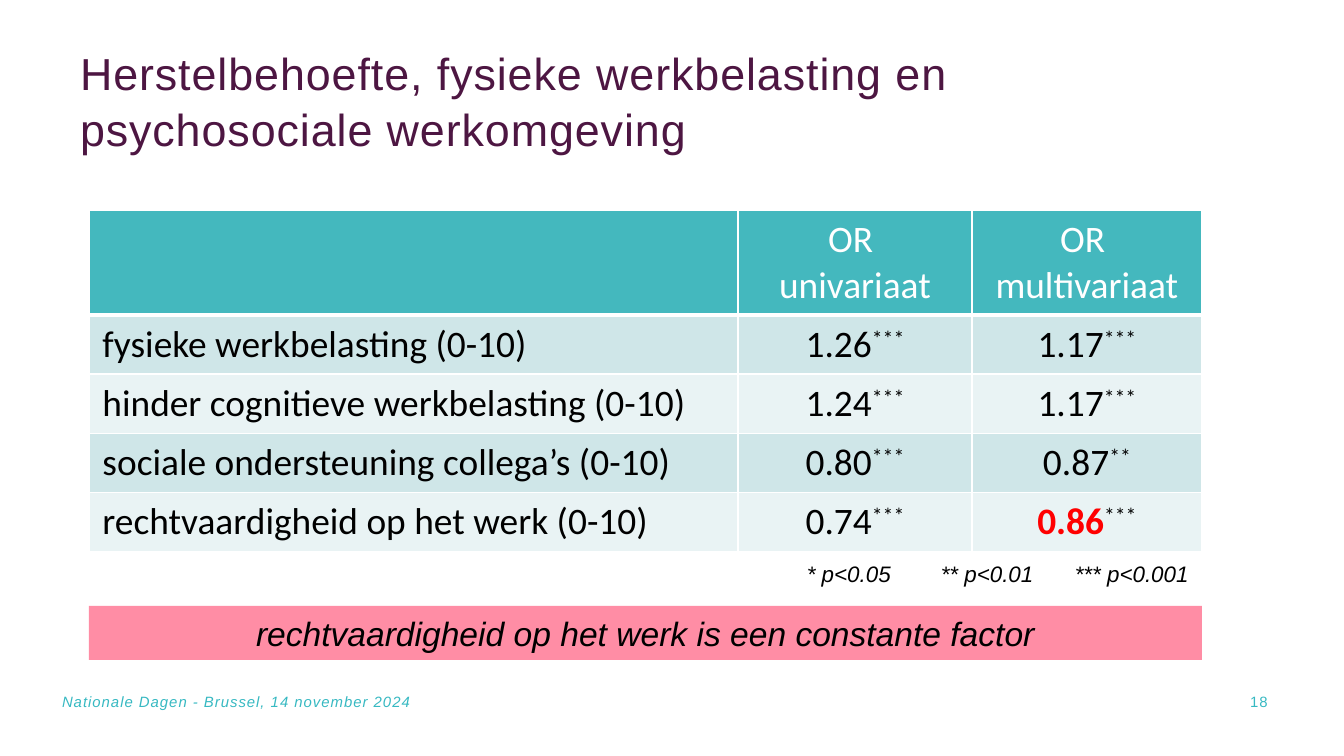
from lxml import etree
from pptx import Presentation
from pptx.dml.color import RGBColor
from pptx.enum.shapes import MSO_SHAPE
from pptx.enum.text import MSO_ANCHOR, PP_ALIGN
from pptx.oxml.ns import qn
from pptx.util import Emu, Pt

LEFT, MID, RIGHT = PP_ALIGN.LEFT, PP_ALIGN.CENTER, PP_ALIGN.RIGHT
TOP, CENTER = MSO_ANCHOR.TOP, MSO_ANCHOR.MIDDLE
RECT = MSO_SHAPE.RECTANGLE
SCALE = 914400 / 134.4  # EMU in one px


def px(n):
    return Emu(round(n * SCALE))


def color(code):
    return RGBColor.from_string(code)


def write(par, text, size=20, font="Calibri", ink="000000", bold=False,
          italic=False, space=0, base=0):
    """Add a run; space is in points, base in percent."""
    run = par.add_run()
    run.text = text
    look = run.font
    look.size, look.name = Pt(size), font
    look.bold, look.italic = bold, italic
    look.color.rgb = color(ink)
    props = run._r.get_or_add_rPr()
    if space:
        props.set("spc", str(round(space * 100)))
    if base:
        props.set("baseline", str(base * 1000))


class Deck:
    plum, teal, pink = "4D1642", "37B9C2", "FF8DA5"
    head, bands = "44B8BE", ("CFE6E8", "E9F3F4")
    white, red = "FFFFFF", "FF0000"

    def __init__(self, wide, high):
        self.file = Presentation()
        self.file.slide_width, self.file.slide_height = px(wide), px(high)
        self.slide = self.file.slides.add_slide(self.file.slide_layouts[5])

    def frame(self, shape, align, anchor, inset=True):
        box = shape.text_frame
        box.word_wrap = True
        box.vertical_anchor = anchor
        if not inset:
            box.margin_left = box.margin_right = 0
            box.margin_top = box.margin_bottom = 0
        par = box.paragraphs[0]
        par.alignment = align
        return par

    def title(self, text, x, y, w, h):
        shape = self.slide.shapes.title
        shape.left, shape.top, shape.width, shape.height = map(px, (x, y, w, h))
        par = self.frame(shape, LEFT, TOP, inset=False)
        par.line_spacing = 1.05
        write(par, text, size=24, font="Arial", ink=self.plum, space=0.5)

    def label(self, text, x, y, w, h, align=LEFT, anchor=CENTER, inset=True,
              tabs=(), **look):
        shape = self.slide.shapes.add_textbox(*map(px, (x, y, w, h)))
        par = self.frame(shape, align, anchor, inset)
        if tabs:
            stops = etree.SubElement(par._p.get_or_add_pPr(), qn("a:tabLst"))
            for stop in tabs:
                etree.SubElement(stops, qn("a:tab"), pos=str(px(stop)), algn="l")
        write(par, text, font="Arial", **look)

    def banner(self, text, x, y, w, h):
        shape = self.slide.shapes.add_shape(RECT, *map(px, (x, y, w, h)))
        shape.shadow.inherit = False
        shape.fill.solid()
        shape.fill.fore_color.rgb = color(self.pink)
        shape.line.fill.background()
        par = self.frame(shape, MID, CENTER)
        write(par, text, size=18, font="Arial", italic=True)

    def cell(self, cell, fill, top=1, bottom=1):
        props = cell._tc.get_or_add_tcPr()
        for side, width in zip("LRTB", (1, 1, top, bottom)):
            line = etree.SubElement(props, qn("a:ln" + side), w=str(Pt(width)))
            paint = etree.SubElement(line, qn("a:solidFill"))
            etree.SubElement(paint, qn("a:srgbClr"), val=self.white)
        cell.fill.solid()
        cell.fill.fore_color.rgb = color(fill)

    def table(self, heads, rows, x, y, cols, tall, high):
        total = tall + high * len(rows)
        grid = self.slide.shapes.add_table(
            len(rows) + 1, len(cols), *map(px, (x, y, sum(cols), total))).table
        for col, width in zip(grid.columns, cols):
            col.width = px(width)
        for i, row in enumerate(grid.rows):
            row.height = px(high if i else tall)

        # Header row, one paragraph a line
        for i, lines in enumerate(heads):
            cell = grid.cell(0, i)
            self.cell(cell, self.head, bottom=3)
            for j, line in enumerate(lines):
                box = cell.text_frame
                par = box.add_paragraph() if j else box.paragraphs[0]
                par.alignment = MID
                write(par, line, ink=self.white)

        # Body rows: name, then value with raised stars
        for i, (name, *odds) in enumerate(rows, 1):
            for j in range(len(cols)):
                self.cell(grid.cell(i, j), self.bands[(i - 1) % 2],
                          top=3 if i == 1 else 1)
            write(grid.cell(i, 0).text_frame.paragraphs[0], name)
            for j, (value, stars, *mark) in enumerate(odds, 1):
                par = grid.cell(i, j).text_frame.paragraphs[0]
                par.alignment = MID
                look = dict(ink=self.red, bold=True) if mark else {}
                write(par, value, **look)
                write(par, stars, base=30)


def main():
    deck = Deck(1344, 756)
    edge, wide = 89, 1113

    deck.title("Herstelbehoefte, fysieke werkbelasting en "
               "psychosociale werkomgeving", 80, 43, 992, 118)

    # Odds ratios
    heads = [(), ("OR ", "univariaat"), ("OR ", "multivariaat")]
    rows = [
        ("fysieke werkbelasting (0-10)", ("1.26", "***"), ("1.17", "***")),
        ("hinder cognitieve werkbelasting (0-10)",
         ("1.24", "***"), ("1.17", "***")),
        ("sociale ondersteuning collega’s (0-10)",
         ("0.80", "***"), ("0.87", "**")),
        ("rechtvaardigheid op het werk (0-10)",
         ("0.74", "***"), ("0.86", "***", "key")),
    ]
    deck.table(heads, rows, edge, 210, (649, 234, 230), 105, 59)

    # Legend and conclusion
    deck.label("* p<0.05\t** p<0.01\t*** p<0.001", 535, 554, 667, 40,
               align=RIGHT, anchor=TOP, tabs=(134, 268), size=12, italic=True)
    deck.banner("rechtvaardigheid op het werk is een constante factor",
                edge, 606, wide, 54)

    # Footer
    foot = dict(size=8, ink=deck.teal, space=0.5)
    deck.label("Nationale Dagen - Brussel, 14 november 2024",
               62, 682, 1078, 40, inset=False, italic=True, **foot)
    deck.label("18", 1059, 682, 222, 40, align=RIGHT, **foot)

    deck.file.save("out.pptx")


if __name__ == "__main__":
    main()
